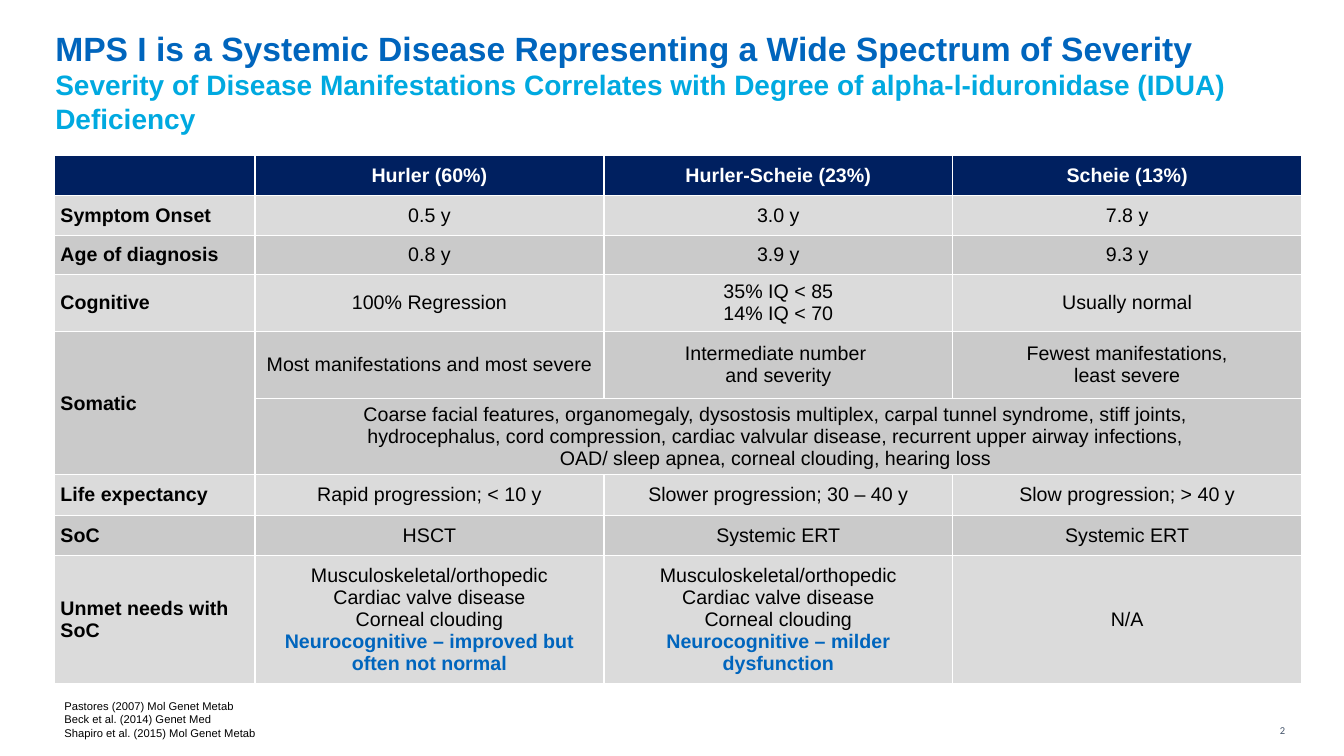
from dataclasses import dataclass

from lxml import etree
from pptx import Presentation
from pptx.dml.color import RGBColor
from pptx.enum.text import MSO_ANCHOR, PP_ALIGN
from pptx.oxml.ns import qn
from pptx.util import Inches, Pt

LEFT, CENTER, RIGHT = PP_ALIGN.LEFT, PP_ALIGN.CENTER, PP_ALIGN.RIGHT
MIDDLE, BOTTOM = MSO_ANCHOR.MIDDLE, MSO_ANCHOR.BOTTOM


@dataclass(frozen=True)
class Theme:
    font: str = "Arial"
    number_font: str = "Calibri"
    title: str = "0065BD"
    subtitle: str = "00A9E0"
    header: str = "002060"
    bands: tuple[str, str] = ("DBDBDB", "CACACA")
    white: str = "FFFFFF"
    black: str = "000000"
    number: str = "44546A"
    title_size: float = 24
    subtitle_size: float = 20
    table_size: float = 14
    source_size: float = 8
    number_size: float = 7.5


THEME = Theme()


@dataclass(frozen=True)
class Style:
    size: float
    color: str
    bold: bool = False
    font: str = THEME.font


@dataclass(frozen=True)
class Entry:
    lines: tuple[str, ...]
    emphasis: str = ""


@dataclass(frozen=True)
class Row:
    label: str
    height: float
    entries: tuple[Entry, ...]


HEADER = Style(THEME.table_size, THEME.white, True)
LABEL = Style(THEME.table_size, THEME.black, True)
BODY = Style(THEME.table_size, THEME.black)
EMPHASIS = Style(THEME.table_size, THEME.title, True)


def entries(*texts: str) -> tuple[Entry, ...]:
    return tuple(Entry((text,)) for text in texts)


UNMET = ("Musculoskeletal/orthopedic", "Cardiac valve disease", "Corneal clouding")
COLUMNS = (1.99, 3.46, 3.46, 3.46)
ROWS = (
    Row("", 0.4, entries("Hurler (60%)", "Hurler-Scheie (23%)", "Scheie (13%)")),
    Row("Symptom Onset", 0.4, entries("0.5 y", "3.0 y", "7.8 y")),
    Row("Age of diagnosis", 0.38, entries("0.8 y", "3.9 y", "9.3 y")),
    Row("Cognitive", 0.57, (Entry(("100% Regression",)),
                            Entry(("35% IQ < 85", "14% IQ < 70")),
                            Entry(("Usually normal",)))),
    Row("Somatic", 0.66, entries("Most manifestations and most severe",
                                 "Intermediate number \nand severity",
                                 "Fewest manifestations,\nleast severe")),
    Row("", 0.75, entries(
        "Coarse facial features, organomegaly, dysostosis multiplex, carpal tunnel syndrome, "
        "stiff joints, \nhydrocephalus, cord compression, cardiac valvular disease, recurrent "
        "upper airway infections, \nOAD/ sleep apnea, corneal clouding, hearing loss ")),
    Row("Life expectancy", 0.4, entries("Rapid progression; < 10 y",
                                        "Slower progression; 30 – 40 y",
                                        "Slow progression; > 40 y")),
    Row("SoC", 0.4, entries("HSCT", "Systemic ERT", "Systemic ERT")),
    Row("Unmet needs with SoC", 1.27, (
        Entry(UNMET, "Neurocognitive – improved but often not normal"),
        Entry(UNMET, "Neurocognitive – milder dysfunction"),
        Entry(("N/A",)))),
)
SOURCES = ("Pastores (2007) Mol Genet Metab", "Beck et al. (2014) Genet Med",
           "Shapiro et al. (2015) Mol Genet Metab")


def add_text(p, text: str, style: Style) -> None:
    """Add runs to a paragraph, with a line break at each newline."""
    for i, part in enumerate(text.split("\n")):
        if i:
            p.add_line_break()
        r = p.add_run()
        r.text = part
        r.font.size = Pt(style.size)
        r.font.name = style.font
        r.font.bold = style.bold
        r.font.color.rgb = RGBColor.from_string(style.color)


def write(tf, lines: list[tuple[str, Style]], align) -> None:
    """Fill a text frame with one paragraph per line."""
    for i, (text, style) in enumerate(lines):
        p = tf.add_paragraph() if i else tf.paragraphs[0]
        p.alignment = align
        add_text(p, text, style)


def add_box(s, left: float, top: float, width: float, height: float, anchor):
    tf = s.shapes.add_textbox(Inches(left), Inches(top), Inches(width), Inches(height)).text_frame
    tf.word_wrap = True
    tf.vertical_anchor = anchor
    return tf


def format_cell(cell, fill: str) -> None:
    cell.margin_left = cell.margin_right = Inches(0.06)
    cell.margin_top = cell.margin_bottom = Inches(0.03)
    cell.vertical_anchor = MIDDLE
    cell.fill.solid()
    cell.fill.fore_color.rgb = RGBColor.from_string(fill)
    props = cell._tc.get_or_add_tcPr()
    for i, side in enumerate(("a:lnL", "a:lnR", "a:lnT", "a:lnB")):
        line = etree.Element(qn(side), w=str(Pt(1)))
        solid = etree.SubElement(line, qn("a:solidFill"))
        etree.SubElement(solid, qn("a:srgbClr"), val=THEME.white)
        props.insert(i, line)


def add_severity_table(s) -> None:
    heights = [row.height for row in ROWS]
    table = s.shapes.add_table(len(ROWS), len(COLUMNS), Inches(0.54), Inches(1.54),
                               Inches(sum(COLUMNS)), Inches(sum(heights))).table
    table.first_row = table.horz_banding = False
    for column, width in zip(table.columns, COLUMNS):
        column.width = Inches(width)
    band = 1
    for i, row in enumerate(ROWS):
        table.rows[i].height = Inches(row.height)
        if row.label:
            band = 1 - band
        fill = THEME.bands[band] if i else THEME.header
        for cell in table.rows[i].cells:
            format_cell(cell, fill)
        if row.label:
            write(table.cell(i, 0).text_frame, [(row.label, LABEL)], LEFT)
        for j, entry in enumerate(row.entries, start=1):
            lines = [(line, BODY if i else HEADER) for line in entry.lines]
            if entry.emphasis:
                lines.append((entry.emphasis, EMPHASIS))
            write(table.cell(i, j).text_frame, lines, CENTER)
        if i and not row.label:
            table.cell(i - 1, 0).merge(table.cell(i, 0))
            table.cell(i, 1).merge(table.cell(i, len(COLUMNS) - 1))


def add_title(s) -> None:
    p = add_box(s, 0.45, 0.43, 12.17, 0.96, BOTTOM).paragraphs[0]
    add_text(p, "MPS I is a Systemic Disease Representing a Wide Spectrum of Severity",
             Style(THEME.title_size, THEME.title, True))
    p.add_line_break()
    add_text(p, "Severity of Disease Manifestations Correlates with Degree of "
                "alpha-l-iduronidase (IDUA) Deficiency",
             Style(THEME.subtitle_size, THEME.subtitle, True))


def add_sources(s) -> None:
    tf = add_box(s, 0.54, 6.94, 12.15, 0.45, BOTTOM)
    style = Style(THEME.source_size, THEME.black)
    write(tf, [(source, style) for source in SOURCES], LEFT)
    for p in tf.paragraphs:
        p.line_spacing = 0.9
        p.space_before = Pt(1.1)


def add_slide_number(s) -> None:
    tf = add_box(s, 12.31, 7.13, 0.46, 0.24, MIDDLE)
    tf.margin_left = tf.margin_right = 0
    tf.margin_top = tf.margin_bottom = Inches(0.04)
    style = Style(THEME.number_size, THEME.number, font=THEME.number_font)
    write(tf, [("2 ", style)], RIGHT)


def main() -> None:
    prs = Presentation()
    prs.slide_width, prs.slide_height = Inches(13.33), Inches(7.5)
    s = prs.slides.add_slide(prs.slide_layouts[6])
    add_slide_number(s)
    add_title(s)
    add_severity_table(s)
    add_sources(s)
    prs.save("out.pptx")


if __name__ == "__main__":
    main()
